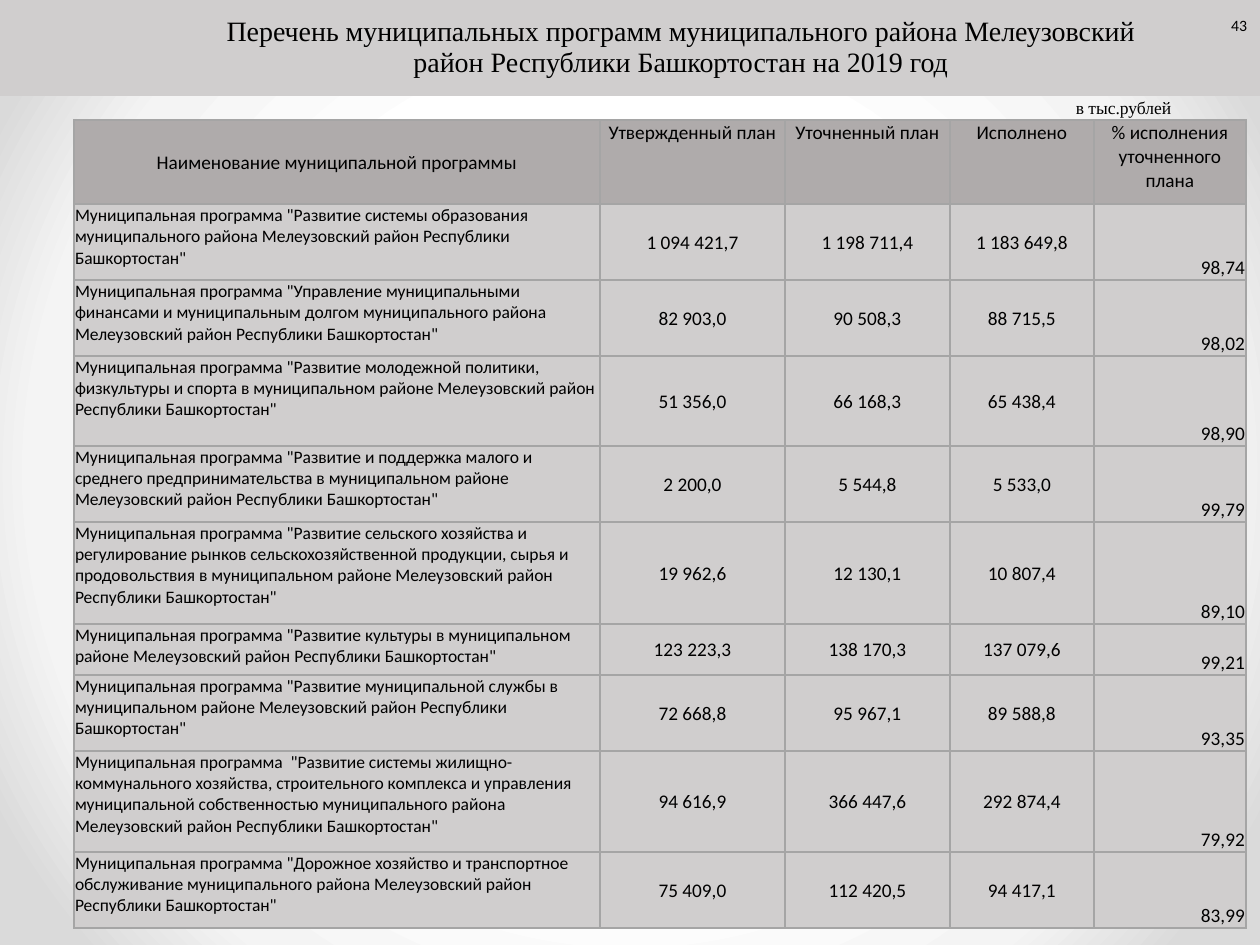
from pptx import Presentation
from pptx.dml.color import RGBColor
from pptx.enum.shapes import MSO_SHAPE
from pptx.enum.text import MSO_ANCHOR, PP_ALIGN
from pptx.oxml import parse_xml
from pptx.oxml.ns import nsdecls
from pptx.util import Pt

BLACK = RGBColor(0x00, 0x00, 0x00)
PANEL = RGBColor(0xD0, 0xCE, 0xCE)
HEADER = RGBColor(0xAF, 0xAB, 0xAB)
BORDER = RGBColor(0xA5, 0xA5, 0xA5)
BACKDROP = [
    (50, RGBColor(0xFF, 0xFF, 0xFF)),
    (76, RGBColor(0xF4, 0xF4, 0xF4)),
    (92, RGBColor(0xDA, 0xDA, 0xDA)),
]
SERIF = "Times New Roman"
SANS = "Calibri"

TITLE = (
    "Перечень муниципальных программ муниципального района Мелеузовский\n"
    "район Республики Башкортостан на 2019 год"
)
HEADINGS = [
    "Наименование муниципальной программы",
    "Утвержденный план",
    "Уточненный план",
    "Исполнено",
    "% исполнения уточненного плана",
]
PROGRAMS = [
    ('Муниципальная программа "Развитие системы образования муниципального района '
     'Мелеузовский район Республики Башкортостан"',
     "1 094 421,7", "1 198 711,4", "1 183 649,8", "98,74"),
    ('Муниципальная программа "Управление муниципальными финансами и муниципальным '
     'долгом муниципального района Мелеузовский район Республики Башкортостан"',
     "82 903,0", "90 508,3", "88 715,5", "98,02"),
    ('Муниципальная программа "Развитие молодежной политики, физкультуры и спорта в '
     'муниципальном районе Мелеузовский район Республики Башкортостан"',
     "51 356,0", "66 168,3", "65 438,4", "98,90"),
    ('Муниципальная программа "Развитие и поддержка малого и среднего '
     'предпринимательства в муниципальном районе Мелеузовский район Республики '
     'Башкортостан"',
     "2 200,0", "5 544,8", "5 533,0", "99,79"),
    ('Муниципальная программа "Развитие сельского хозяйства и регулирование рынков '
     'сельскохозяйственной продукции, сырья и продовольствия в муниципальном районе '
     'Мелеузовский район Республики Башкортостан"',
     "19 962,6", "12 130,1", "10 807,4", "89,10"),
    ('Муниципальная программа "Развитие культуры в муниципальном районе Мелеузовский '
     'район Республики Башкортостан"',
     "123 223,3", "138 170,3", "137 079,6", "99,21"),
    ('Муниципальная программа "Развитие муниципальной службы в муниципальном районе '
     'Мелеузовский район Республики Башкортостан"',
     "72 668,8", "95 967,1", "89 588,8", "93,35"),
    ('Муниципальная программа  "Развитие системы жилищно-коммунального хозяйства, '
     'строительного комплекса и управления муниципальной собственностью '
     'муниципального района Мелеузовский район Республики Башкортостан"',
     "94 616,9", "366 447,6", "292 874,4", "79,92"),
    ('Муниципальная программа "Дорожное хозяйство и транспортное обслуживание '
     'муниципального района Мелеузовский район Республики Башкортостан"',
     "75 409,0", "112 420,5", "94 417,1", "83,99"),
]
COLUMN_WIDTHS = [526, 185, 165, 144, 152]
ROW_HEIGHTS = [84, 76, 76, 90, 76, 102, 51, 76, 101, 76]


def px(length):
    """Turn pixels, 126 to the inch, into EMU."""
    return round(length * 914400 / 126)


def write(frame, text, size=11, font=SANS, align=PP_ALIGN.CENTER, spacing=None):
    """Put one formatted paragraph into a text frame."""
    frame.word_wrap = True
    paragraph = frame.paragraphs[0]
    paragraph.text = text
    paragraph.alignment = align
    if spacing:
        paragraph.line_spacing = spacing
    for run in paragraph.runs:
        run.font.size = Pt(size)
        run.font.name = font
        run.font.color.rgb = BLACK


def set_margins(holder, left=0, top=0, right=0, bottom=0):
    """Set the inner margins of a text frame or a cell."""
    holder.margin_left, holder.margin_top = px(left), px(top)
    holder.margin_right, holder.margin_bottom = px(right), px(bottom)


def paint_background(slide):
    """Give the slide a radial grey gradient."""
    stops = "".join(
        f'<a:gs pos="{position * 1000}"><a:srgbClr val="{color}"/></a:gs>'
        for position, color in BACKDROP
    )
    slide.element.cSld.insert(0, parse_xml(
        f'<p:bg {nsdecls("p", "a")}><p:bgPr><a:gradFill><a:gsLst>{stops}</a:gsLst>'
        '<a:path path="circle"><a:fillToRect l="50000" t="50000" r="50000" b="50000"/>'
        '</a:path></a:gradFill><a:effectLst/></p:bgPr></p:bg>'
    ))


def add_panel(slide, kind, box, text, fill=None, indent=0, **text_format):
    """Add a borderless shape with vertically centred text."""
    panel = slide.shapes.add_shape(kind, *map(px, box))
    panel.shadow.inherit = False
    panel.line.fill.background()
    if fill is None:
        panel.fill.background()
    else:
        panel.fill.solid()
        panel.fill.fore_color.rgb = fill
    set_margins(panel.text_frame, left=indent)
    panel.text_frame.vertical_anchor = MSO_ANCHOR.MIDDLE
    write(panel.text_frame, text, **text_format)


def add_page_number(slide, number):
    """Add the page number in the top right corner."""
    frame = slide.shapes.add_textbox(px(966), 0, px(294), px(50)).text_frame
    set_margins(frame, left=13, right=13)
    frame.vertical_anchor = MSO_ANCHOR.MIDDLE
    write(frame, number, size=9, align=PP_ALIGN.RIGHT)


def fill_cell(cell, text, fill, anchor, **text_format):
    """Fill, border and write one table cell."""
    set_margins(cell, left=1, top=1, right=1)
    cell.vertical_anchor = anchor
    cell.fill.solid()
    cell.fill.fore_color.rgb = fill
    write(cell.text_frame, text, **text_format)
    properties = cell._tc.get_or_add_tcPr()
    for index, side in enumerate(("lnL", "lnR", "lnT", "lnB")):
        properties.insert(index, parse_xml(
            f'<a:{side} {nsdecls("a")} w="{Pt(1)}"><a:solidFill>'
            f'<a:srgbClr val="{BORDER}"/></a:solidFill></a:{side}>'
        ))


def add_program_table(slide):
    """Add the table of programs with plans and execution."""
    table = slide.shapes.add_table(
        len(ROW_HEIGHTS), len(COLUMN_WIDTHS), px(74), px(120),
        px(sum(COLUMN_WIDTHS)), px(sum(ROW_HEIGHTS)),
    ).table
    table.first_row = table.horz_banding = False
    for column, width in zip(table.columns, COLUMN_WIDTHS):
        column.width = px(width)
    for row, height in zip(table.rows, ROW_HEIGHTS):
        row.height = px(height)
    for index, heading in enumerate(HEADINGS):
        anchor = MSO_ANCHOR.TOP if index else MSO_ANCHOR.MIDDLE
        fill_cell(table.cell(0, index), heading, HEADER, anchor)
    for row, (name, *amounts, percent) in enumerate(PROGRAMS, 1):
        fill_cell(table.cell(row, 0), name, PANEL, MSO_ANCHOR.TOP,
                  size=10, align=PP_ALIGN.LEFT)
        for column, amount in enumerate(amounts, 1):
            fill_cell(table.cell(row, column), amount, PANEL, MSO_ANCHOR.MIDDLE)
        fill_cell(table.cell(row, 4), percent, PANEL, MSO_ANCHOR.BOTTOM,
                  align=PP_ALIGN.RIGHT)


def main():
    """Build the slide and save it."""
    deck = Presentation()
    deck.slide_width, deck.slide_height = px(1260), px(945)
    slide = deck.slides.add_slide(deck.slide_layouts[6])
    paint_background(slide)
    add_panel(slide, MSO_SHAPE.RECTANGLE, (0, 0, 1260, 96), TITLE,
              fill=PANEL, indent=102, size=16, font=SERIF, spacing=0.9)
    add_page_number(slide, "43")
    add_panel(slide, MSO_SHAPE.ROUNDED_RECTANGLE, (987, 100, 273, 15),
              "в тыс.рублей", size=10, font=SERIF)
    add_program_table(slide)
    deck.save("out.pptx")


if __name__ == "__main__":
    main()
